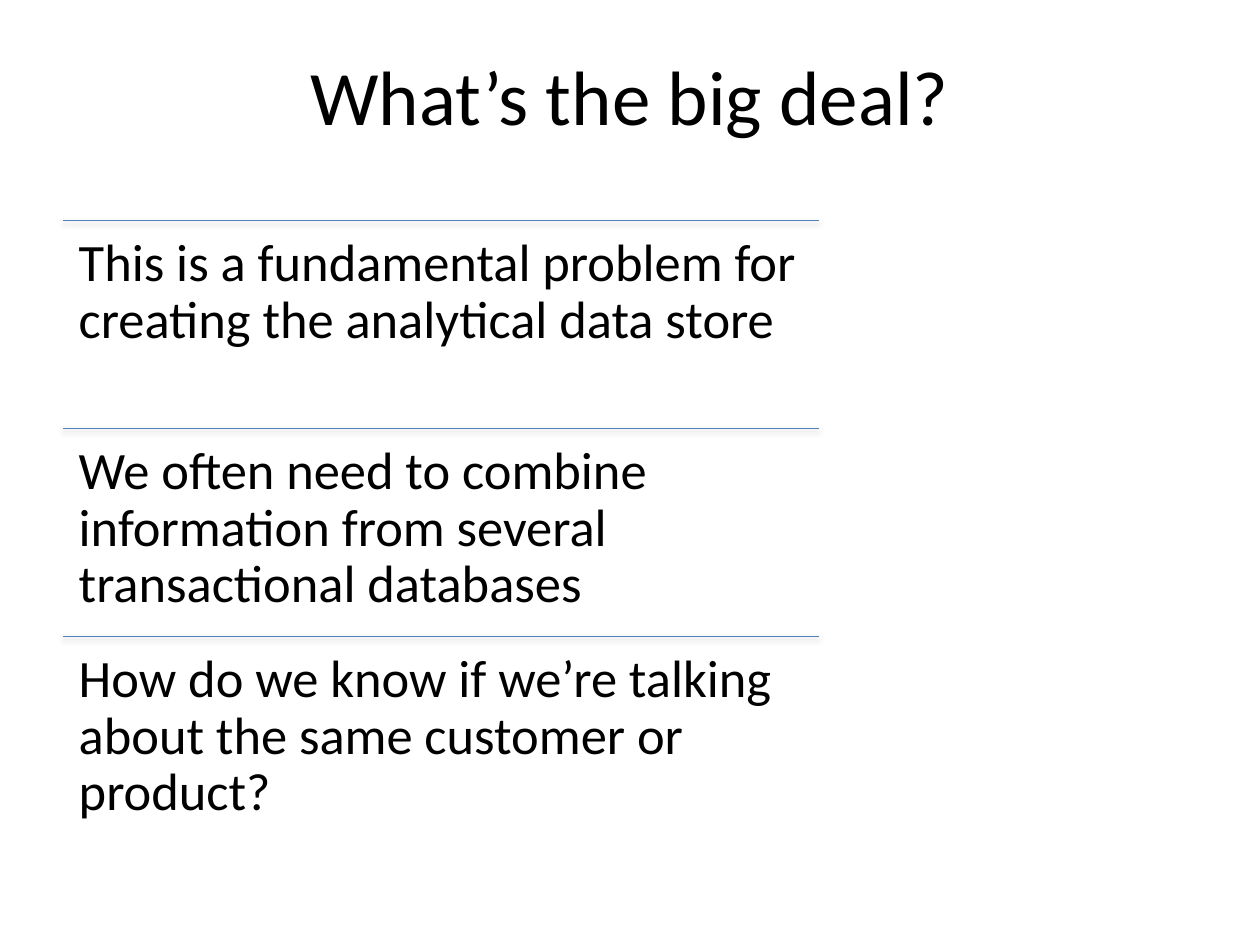
from lxml.etree import SubElement
from pptx import Presentation
from pptx.dml.color import RGBColor
from pptx.enum.shapes import MSO_CONNECTOR
from pptx.enum.text import MSO_ANCHOR, PP_ALIGN
from pptx.oxml.ns import qn
from pptx.util import Pt

TITLE = "What’s the big deal?"
POINTS = [
    "This is a fundamental problem for creating the analytical data store",
    "We often need to combine information from several transactional databases",
    "How do we know if we’re talking about the same customer or product?",
]
COLORS = {"text": "000000", "rule": "4F81BD", "shadow": "000000"}
FONT = "Calibri"
LEFT, TOP = 36, 126
ROW_WIDTH, ROW_HEIGHT = 432, 118.8


def add_text(slide, text, left, top, width, height, size, inset):
    box = slide.shapes.add_textbox(Pt(left), Pt(top), Pt(width), Pt(height))
    frame = box.text_frame
    frame.word_wrap = True
    frame.margin_left = frame.margin_right = Pt(inset)
    frame.margin_top = frame.margin_bottom = Pt(inset)
    frame.text = text
    para = frame.paragraphs[0]
    font = para.runs[0].font
    font.name, font.size = FONT, Pt(size)
    font.color.rgb = RGBColor.from_string(COLORS["text"])
    return frame, para


def add_rule(slide, left, top, width):
    rule = slide.shapes.add_connector(
        MSO_CONNECTOR.STRAIGHT, Pt(left), Pt(top), Pt(left + width), Pt(top))
    rule.line.width = Pt(0.75)
    rule.line.color.rgb = RGBColor.from_string(COLORS["rule"])
    # Soft shadow straight below the rule
    effects = SubElement(rule._element.spPr, qn("a:effectLst"))
    shadow = SubElement(effects, qn("a:outerShdw"), blurRad=str(Pt(3.15)),
                        dist=str(Pt(1.57)), dir="5400000", rotWithShape="0")
    color = SubElement(shadow, qn("a:srgbClr"), val=COLORS["shadow"])
    SubElement(color, qn("a:alpha"), val="38000")


deck = Presentation()
deck.slide_width, deck.slide_height = Pt(720), Pt(540)
slide = deck.slides.add_slide(deck.slide_layouts[6])

# Title
frame, para = add_text(slide, TITLE, LEFT, 18, 648, 72, 44, 4)
frame.vertical_anchor = MSO_ANCHOR.MIDDLE
para.alignment = PP_ALIGN.CENTER

# Ruled list
for index, point in enumerate(POINTS):
    top = TOP + index * ROW_HEIGHT
    add_rule(slide, LEFT, top, ROW_WIDTH)
    frame, para = add_text(slide, point, LEFT, top, ROW_WIDTH, ROW_HEIGHT, 30, 9)
    para.line_spacing = 0.9

deck.save("out.pptx")
